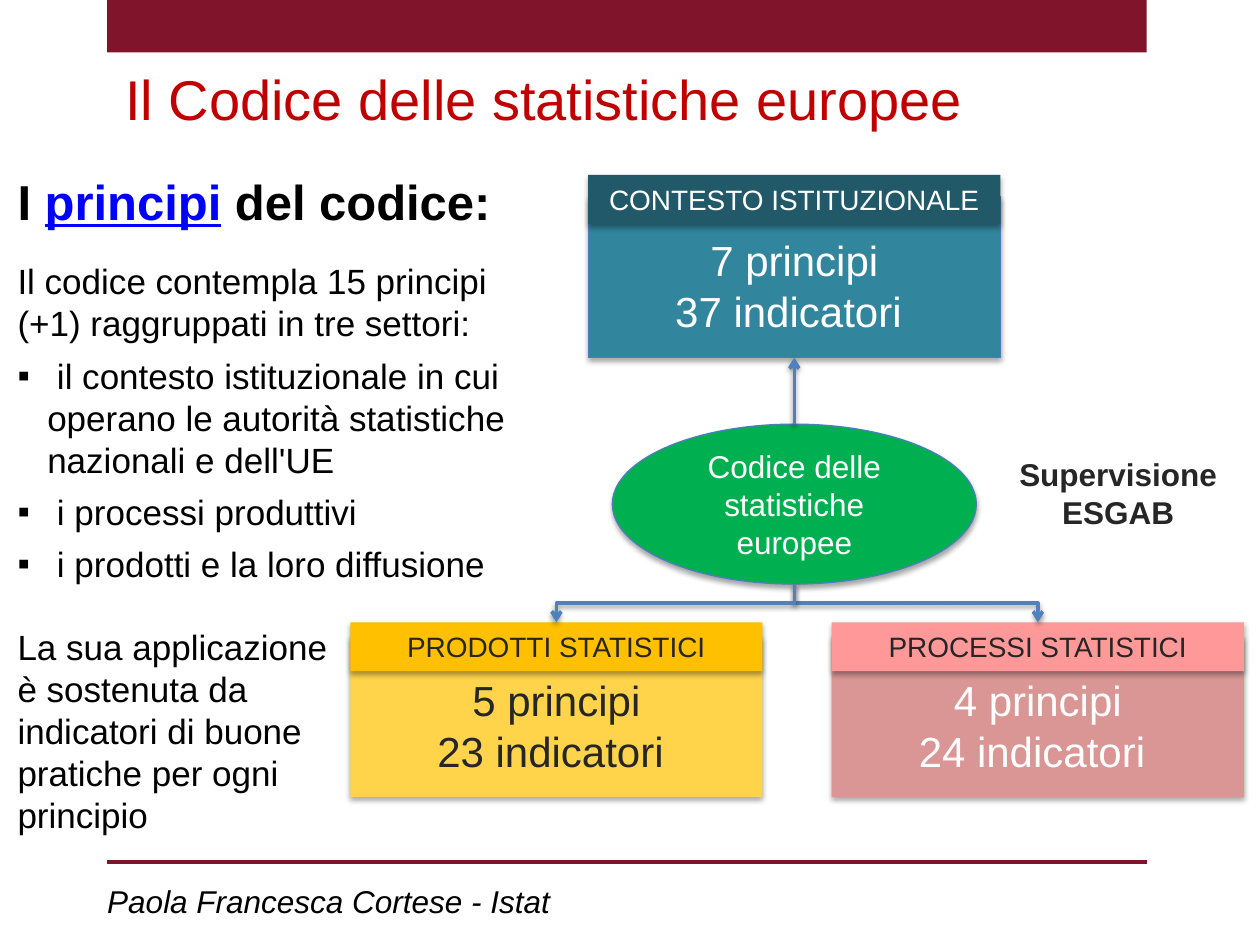
from lxml.etree import SubElement
from pptx import Presentation
from pptx.dml.color import RGBColor
from pptx.enum.shapes import MSO_CONNECTOR, MSO_SHAPE
from pptx.enum.text import MSO_ANCHOR, MSO_AUTO_SIZE, PP_ALIGN
from pptx.oxml.ns import qn
from pptx.util import Pt

HEX = {
    "wine": "7F142A", "red": "C00000", "black": "000000", "dark": "262626",
    "white": "FFFFFF", "link": "0000FF", "teal": "31859C", "deep": "215968",
    "rose": "D99694", "pink": "FF9999", "sand": "FFD44B", "gold": "FFC000",
    "green": "00B050", "edge": "4B7EBC", "blue": "4F81BD",
}


def tint(name):
    return RGBColor.from_string(HEX[name])


def write(par, text, size=20, color="black", bold=False, italic=False,
          under=False, align=PP_ALIGN.LEFT, before=0, bullet=None):
    par.alignment = align
    par.space_before = Pt(before)
    props = par._p.get_or_add_pPr()
    if not par.runs:
        dent = Pt(17) if bullet else 0
        props.set("marL", str(dent))
        props.set("indent", str(-dent))
        if bullet:
            SubElement(props, qn("a:buChar"), char=bullet)
        else:
            SubElement(props, qn("a:buNone"))
    run = par.add_run()
    run.text = text
    font = run.font
    font.name = "Arial"
    font.size = Pt(size)
    font.bold = bold
    font.italic = italic
    font.underline = under
    font.color.rgb = tint(color)


def lines(frame, texts, **form):
    for i, text in enumerate(texts):
        par = frame.add_paragraph() if i else frame.paragraphs[0]
        write(par, text, **form)


def place(item, box):
    item.left, item.top, item.width, item.height = map(Pt, box)


def shade(list_, alpha, dist):
    shadow = SubElement(list_, qn("a:outerShdw"), blurRad=str(Pt(3.1)),
                        dist=str(Pt(dist)), dir="5400000", rotWithShape="0")
    color = SubElement(shadow, qn("a:srgbClr"), val=HEX["black"])
    SubElement(color, qn("a:alpha"), val=str(alpha * 1000))


def panel(slide, box, fill, kind=MSO_SHAPE.RECTANGLE, edge=None, cast=True):
    item = slide.shapes.add_shape(kind, *map(Pt, box))
    item.fill.solid()
    item.fill.fore_color.rgb = tint(fill)
    if edge:
        item.line.color.rgb = tint(edge)
        item.line.width = Pt(0.75)
    else:
        item.line.fill.background()
    item.shadow.inherit = False
    if cast:
        shade(item._element.spPr.find(qn("a:effectLst")), 35, 1.8)
    item.text_frame.word_wrap = True
    item.text_frame.vertical_anchor = MSO_ANCHOR.MIDDLE
    return item


def link(slide, kind, start, end, color, arrow=True):
    item = slide.shapes.add_connector(kind, *map(Pt, start + end))
    item.line.color.rgb = tint(color)
    item.line.width = Pt(2)
    props = item._element.spPr
    if arrow:
        SubElement(props.find(qn("a:ln")), qn("a:tailEnd"), type="arrow")
    effects = SubElement(props, qn("a:effectLst"))
    if arrow:
        shade(effects, 38, 1.6)
    return item


def elbow(slide, start, end):
    item = link(slide, MSO_CONNECTOR.ELBOW, start, end, "blue")
    run, drop = end[0] - start[0], end[1] - start[1]
    mid_x, mid_y = start[0] + run / 2, start[1] + drop / 2
    place(item, (mid_x - drop / 2, mid_y - abs(run) / 2, drop, abs(run)))
    frame = item._element.spPr.find(qn("a:xfrm"))
    for key in ("flipH", "flipV"):
        frame.attrib.pop(key, None)
    frame.set("rot", "16200000" if run > 0 else "5400000")
    if run > 0:
        frame.set("flipH", "1")


def frame(slide, box):
    left, top, width, height = box
    bar = panel(slide, (left, top, width, 30), "wine", cast=False)
    rule = top + 492.5
    link(slide, MSO_CONNECTOR.STRAIGHT, (left, rule), (left + width, rule),
         "wine", arrow=False)
    note = slide.shapes.add_textbox(*map(Pt, (left - 7, top + 500.5, 420, 29)))
    note.text_frame.word_wrap = True
    lines(note.text_frame, ["Paola Francesca Cortese - Istat"], size=18, italic=True)


def title(slide, box):
    item = slide.shapes.title
    place(item, box)
    item.text_frame.auto_size = MSO_AUTO_SIZE.NONE
    item.text_frame.vertical_anchor = MSO_ANCHOR.TOP
    lines(item.text_frame, ["Il Codice delle statistiche europee"], size=32, color="red")


def body(slide, box):
    item = slide.placeholders[1]
    place(item, box)
    text = item.text_frame
    text.auto_size = MSO_AUTO_SIZE.NONE
    text.vertical_anchor = MSO_ANCHOR.TOP
    head = text.paragraphs[0]
    write(head, "I ", size=28, bold=True)
    write(head, "principi", size=28, bold=True, color="link", under=True)
    write(head, " del codice:", size=28, bold=True)
    write(text.add_paragraph(),
          "Il codice contempla 15 principi (+1) raggruppati in tre settori:", before=17)
    for point in (" il contesto istituzionale in cui operano le autorità "
                  "statistiche nazionali e dell'UE",
                  " i processi produttivi", " i prodotti e la loro diffusione"):
        write(text.add_paragraph(), point, before=5.8, bullet="▪")
    close = ("La sua applicazione", "è sostenuta da", "indicatori di buone",
             "pratiche per ogni", "principio")
    for i, line in enumerate(close):
        write(text.add_paragraph(), line, before=0 if i else 23.5)


def card(slide, box, gap, head, facts, fills, inks, edge=None):
    left, top, width, height = box
    base = panel(slide, (left, top + gap, width, height - gap), fills[0], edge=edge)
    base.text_frame.margin_top = Pt(13)
    lines(base.text_frame, facts, size=24, color=inks[0], align=PP_ALIGN.CENTER)
    tab = panel(slide, (left, top, width, 28), fills[1])
    lines(tab.text_frame, [head], size=16, color=inks[1], align=PP_ALIGN.CENTER)
    return base


def chart(slide, box):
    left, top, width, height = box
    wide = 235.5
    mid = left + 253.7
    base = card(slide, (mid - wide / 2, top, wide, 104.4), 12.2,
                "CONTESTO ISTITUZIONALE", ["7 principi", "37 indicatori "],
                ("teal", "deep"), ("white", "white"), edge="edge")
    low = top + 255.6
    card(slide, (left, low, wide, height - 255.6), 8,
         "PRODOTTI STATISTICI", ["5 principi", "23 indicatori "],
         ("sand", "gold"), ("dark", "dark"))
    card(slide, (left + width - wide, low, wide, height - 255.6), 8,
         "PROCESSI STATISTICI", ["4 principi", "24 indicatori "],
         ("rose", "pink"), ("white", "dark"))
    side = panel(slide, (left + 366.4, top + 145.5, 144.7, 72), "white", cast=False)
    lines(side.text_frame, ["Supervisione", "ESGAB"], size=18, bold=True,
          color="dark", align=PP_ALIGN.CENTER)
    core = panel(slide, (mid - 104, top + 142.4, 208, 91.4), "green",
                 MSO_SHAPE.OVAL, "edge")
    lines(core.text_frame, ["Codice delle statistiche europee"], size=18,
          color="white", align=PP_ALIGN.CENTER)
    rise = link(slide, MSO_CONNECTOR.STRAIGHT, (mid, top + 142.4),
                (mid, top + 104.4), "blue")
    rise.begin_connect(core, 0)
    rise.end_connect(base, 2)
    for goal in (left + width - wide / 2, left + wide / 2):
        elbow(slide, (mid, top + 233.8), (goal, low))


def main():
    deck = Presentation()
    deck.slide_width, deck.slide_height = Pt(720), Pt(540)
    slide = deck.slides.add_slide(deck.slide_layouts[1])
    frame(slide, (61.2, 0, 594, 540))
    title(slide, (64.3, 33.3, 655.7, 46))
    body(slide, (2.8, 94.3, 294, 392.4))
    chart(slide, (200.2, 100, 510.6, 355.6))
    deck.save("out.pptx")


if __name__ == "__main__":
    main()
